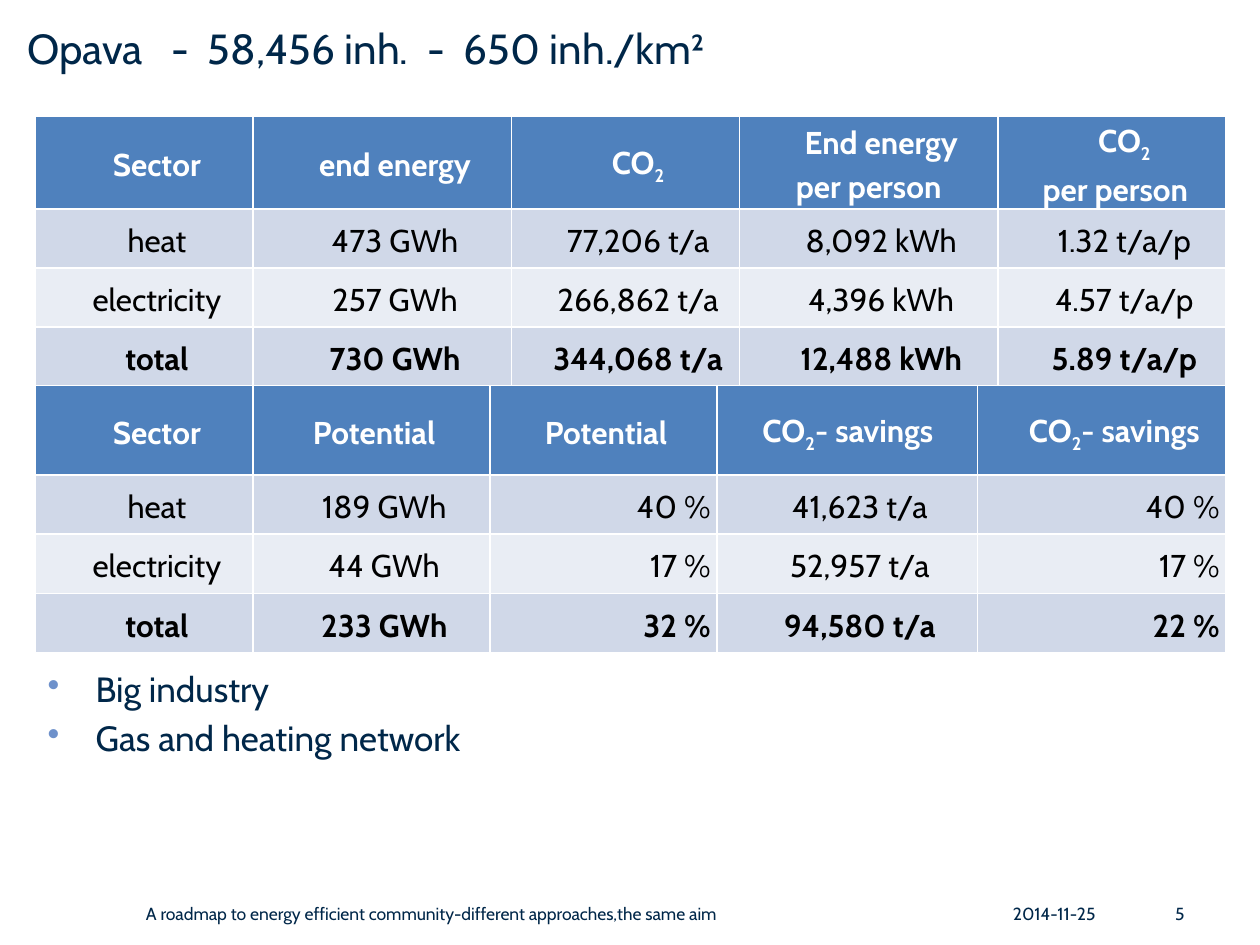
"""Build the Opava energy balance slide."""
from lxml import etree
from pptx import Presentation
from pptx.dml.color import RGBColor
from pptx.enum import text as t
from pptx.util import Inches, Pt

HUES = {"navy": "002749", "dot": "6E91CB", "head": "4F81BD", "odd": "D0D8E8",
        "even": "E9EDF4", "white": "FFFFFF", "black": "000000"}
NS = "{http://schemas.openxmlformats.org/drawingml/2006/main}"
MID, RIGHT = t.PP_ALIGN.CENTER, t.PP_ALIGN.RIGHT


def style(para, size, hue, bold=False):
    font = para.font
    font.name, font.size, font.bold = "Cabin", Pt(size), bold
    font.color.rgb = RGBColor.from_string(HUES[hue])


def add_text(area, words, size, anchor=t.MSO_ANCHOR.MIDDLE, align=None):
    box = slide.shapes.add_textbox(*map(Inches, area))
    frame = box.text_frame
    frame.word_wrap, frame.vertical_anchor = True, anchor
    frame.text = words
    for para in frame.paragraphs:
        para.alignment = align
        style(para, size, "navy")
    return frame


prs = Presentation()
prs.slide_width, prs.slide_height = Inches(10), Inches(7.5)
slide = prs.slides.add_slide(prs.slide_layouts[6])

add_text((0.12, 0.13, 9.53, 0.63), "Opava   -  58,456 inh.  -  650 inh./km²",
         24, t.MSO_ANCHOR.TOP)
add_text((7.94, 7.05, 0.92, 0.4), "2014-11-25", 10)
add_text((1.06, 7.05, 6.46, 0.4),
         "A roadmap to energy efficient community-different approaches,the same aim", 10)
add_text((8.86, 7.05, 0.64, 0.4), "5", 10, align=RIGHT)

notes = add_text((0.28, 5.25, 9.45, 1.26), "Big industry\nGas and heating network",
                 20, t.MSO_ANCHOR.TOP)
for row, para in enumerate(notes.paragraphs):
    props = para._p.get_or_add_pPr()
    props.set("marL", str(Inches(0.38)))
    props.set("indent", str(Inches(-0.38)))
    tint = etree.Element(NS + "buClr")
    etree.SubElement(tint, NS + "srgbClr", val=HUES["dot"])
    props.insert(0, tint)
    props.insert(1, etree.Element(NS + "buChar", char="•"))
    if row:
        para.space_before = Pt(4)

tables = [
    (0.92, 0.56, [1.73, 2.05, 1.81, 2.05, 1.81], [0.2] * 5, [MID] * 5, [
        ["Sector", "end energy", "CO₂", "End energy\nper person", "CO₂\n per person"],
        ["heat", "473 GWh", "77,206 t/a", "8,092 kWh", "1.32 t/a/p"],
        ["electricity", "257 GWh", "266,862 t/a", "4,396 kWh", "4.57 t/a/p"],
        ["total", "730 GWh", "344,068 t/a", "12,488 kWh", "5.89 t/a/p"]]),
    (3.06, 0.71, [1.73, 1.88, 1.8, 2.07, 1.97], [0.2, 0.04, 0.04, 0.01, 0.2],
     [MID, MID, RIGHT, MID, RIGHT], [
        ["Sector", "Potential", "Potential", "CO₂- savings", "CO₂- savings"],
        ["heat", "189 GWh", "40 %", "41,623 t/a", "40 %"],
        ["electricity", "44 GWh", "17 %", "52,957 t/a", "17 %"],
        ["total", "233 GWh", "32 %", "94,580 t/a", "22 %"]]),
]
fills = ["head", "odd", "even", "odd"]

for top, high, wide, dents, sides, data in tables:
    grid = slide.shapes.add_table(4, 5, Inches(0.28), Inches(top), Inches(sum(wide)),
                                  Inches(high + 3 * 0.47)).table
    for col, width in zip(grid.columns, wide):
        col.width = Inches(width)
    for row, line in enumerate(data):
        grid.rows[row].height = Inches(0.47 if row else high)
        for col, words in enumerate(line):
            cell = grid.cell(row, col)
            cell.fill.solid()
            cell.fill.fore_color.rgb = RGBColor.from_string(HUES[fills[row]])
            cell.vertical_anchor = t.MSO_ANCHOR.MIDDLE
            cell.margin_left = cell.margin_right = Inches(0.05)
            cell.margin_top = cell.margin_bottom = 0
            para = cell.text_frame.paragraphs[0]
            para.alignment = sides[col] if row else MID
            para.line_spacing = 1.15
            dent = 0.2 if row else dents[col]
            props = para._p.get_or_add_pPr()
            props.set("marL", "0")
            props.set("indent", str(Inches(dent)))
            for num, part in enumerate(words.split("\n")):
                if num:
                    para.add_line_break()
                base, sub, rest = part.partition("₂")
                para.add_run().text = base
                if sub:
                    low = para.add_run()
                    low.text = "2"
                    low.font._element.set("baseline", "-25000")
                if rest:
                    para.add_run().text = rest
            style(para, 18, "black" if row else "white", row in (0, 3))

prs.save("out.pptx")
